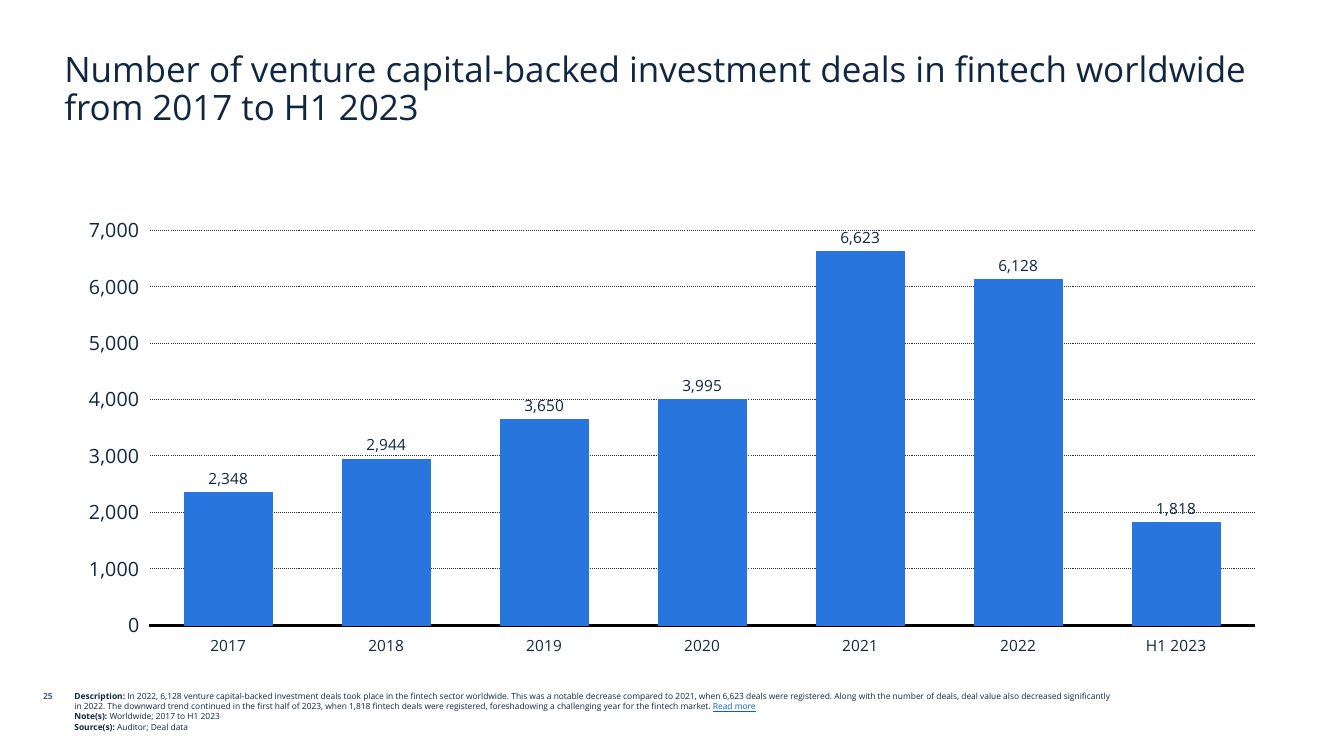
from pptx import Presentation
from pptx.chart.data import CategoryChartData
from pptx.dml.color import RGBColor
from pptx.enum.chart import XL_CHART_TYPE, XL_LABEL_POSITION, XL_TICK_LABEL_POSITION, XL_TICK_MARK
from pptx.enum.dml import MSO_LINE
from pptx.enum.text import MSO_ANCHOR, PP_ALIGN
from pptx.util import Inches, Pt

NAVY = RGBColor(0x0F, 0x27, 0x41)
SLATE = RGBColor(0x45, 0x5F, 0x7C)
LINK = RGBColor(0x05, 0x63, 0xC1)
BLUE = RGBColor(0x28, 0x75, 0xDD)
GRID = RGBColor(0x2F, 0x2F, 0x2F)
BLACK = RGBColor(0x00, 0x00, 0x00)

COLUMNS = XL_CHART_TYPE.COLUMN_CLUSTERED
OUTSIDE = XL_LABEL_POSITION.OUTSIDE_END
LOW = XL_TICK_LABEL_POSITION.LOW
NO_TICK = XL_TICK_MARK.NONE
DOTTED = MSO_LINE.ROUND_DOT
TOP, BOTTOM = MSO_ANCHOR.TOP, MSO_ANCHOR.BOTTOM
LEFT, RIGHT = PP_ALIGN.LEFT, PP_ALIGN.RIGHT

TITLE = ("Number of venture capital-backed investment deals in fintech "
         "worldwide from 2017 to H1 2023")
DEALS = {"2017": 2348, "2018": 2944, "2019": 3650, "2020": 3995,
         "2021": 6623, "2022": 6128, "H1 2023": 1818}
DESCRIPTION = (
    "In 2022, 6,128 venture capital-backed investment deals took place in the "
    "fintech sector worldwide. This was a notable decrease compared to 2021, "
    "when 6,623 deals were registered. Along with the number of deals, deal "
    "value also decreased significantly in 2022. The downward trend continued "
    "in the first half of 2023, when 1,818 fintech deals were registered, "
    "foreshadowing a challenging year for the fintech market. ")
BOLD = {"bold": True}
FOOTNOTES = [
    [("Description: ", BOLD), (DESCRIPTION, {}),
     ("Read more", {"color": LINK, "underline": True})],
    [("Note(s): ", BOLD), ("Worldwide; 2017 to H1 2023", {})],
    [("Source(s): ", BOLD), ("Auditor; Deal data", {})],
]


def set_font(font, size, color=NAVY, bold=False, underline=False):
    font.name = "Open Sans"
    font.size = Pt(size)
    font.bold = bold
    font.underline = underline
    font.color.rgb = color


def add_run(p, text, **fmt):
    r = p.add_run()
    r.text = text
    set_font(r.font, **fmt)


class SlideBuilder:
    def __init__(self, prs):
        self.slide = prs.slides.add_slide(prs.slide_layouts[6])

    def text(self, box, paragraphs, size, anchor=TOP, align=LEFT, spacing=1.0):
        sp = self.slide.shapes.add_textbox(*map(Inches, box))
        tf = sp.text_frame
        tf.word_wrap = True
        tf.vertical_anchor = anchor
        for i, runs in enumerate(paragraphs):
            p = tf.add_paragraph() if i else tf.paragraphs[0]
            p.alignment = align
            p.line_spacing = spacing
            for text, fmt in runs:
                add_run(p, text, size=size, **fmt)

    def axis(self, axis, size):
        axis.tick_label_position = LOW
        axis.major_tick_mark = axis.minor_tick_mark = NO_TICK
        set_font(axis.tick_labels.font, size)

    def column_chart(self, box, values, top, step):
        data = CategoryChartData(number_format="#,##0")
        data.categories = list(values)
        data.add_series("Series 1", list(values.values()))
        frame = self.slide.shapes.add_chart(COLUMNS, *map(Inches, box), data)
        chart = frame.chart
        chart.has_legend = False
        chart.has_title = False
        set_font(chart.font, 11)

        cat_axis = chart.category_axis
        self.axis(cat_axis, 11)
        cat_axis.format.line.color.rgb = BLACK
        cat_axis.format.line.width = Pt(2)

        val_axis = chart.value_axis
        self.axis(val_axis, 14)
        val_axis.minimum_scale = 0
        val_axis.maximum_scale = top
        val_axis.major_unit = step
        val_axis.tick_labels.number_format = "#,##0"
        val_axis.tick_labels.number_format_is_linked = False
        val_axis.format.line.fill.background()
        grid = val_axis.major_gridlines.format.line
        grid.color.rgb = GRID
        grid.width = Pt(0.75)
        grid.dash_style = DOTTED

        plot = chart.plots[0]
        plot.gap_width = 80
        plot.overlap = -30
        plot.vary_by_categories = False
        series = plot.series[0]
        series.invert_if_negative = False
        series.format.fill.solid()
        series.format.fill.fore_color.rgb = BLUE
        series.format.line.color.rgb = BLUE
        series.format.line.width = Pt(0.75)

        labels = series.data_labels
        labels.show_value = True
        labels.position = OUTSIDE
        labels.number_format = "#,##0"
        labels.number_format_is_linked = False
        set_font(labels.font, 11)


def main():
    prs = Presentation()
    prs.slide_width = Inches(13.33)
    prs.slide_height = Inches(7.5)
    s = SlideBuilder(prs)
    s.text((0.54, 0.46, 12.24, 0.86), [[(TITLE, {})]], 25,
           anchor=BOTTOM, spacing=0.9)
    s.column_chart((0.64, 2.06, 12.05, 4.54), DEALS, 7000, 1000)
    s.text((0, 6.81, 0.62, 0.3), [[("25", {"color": SLATE, "bold": True})]], 6,
           align=RIGHT)
    s.text((0.64, 6.81, 10.47, 0.58), FOOTNOTES, 6)
    prs.save("out.pptx")


if __name__ == "__main__":
    main()
